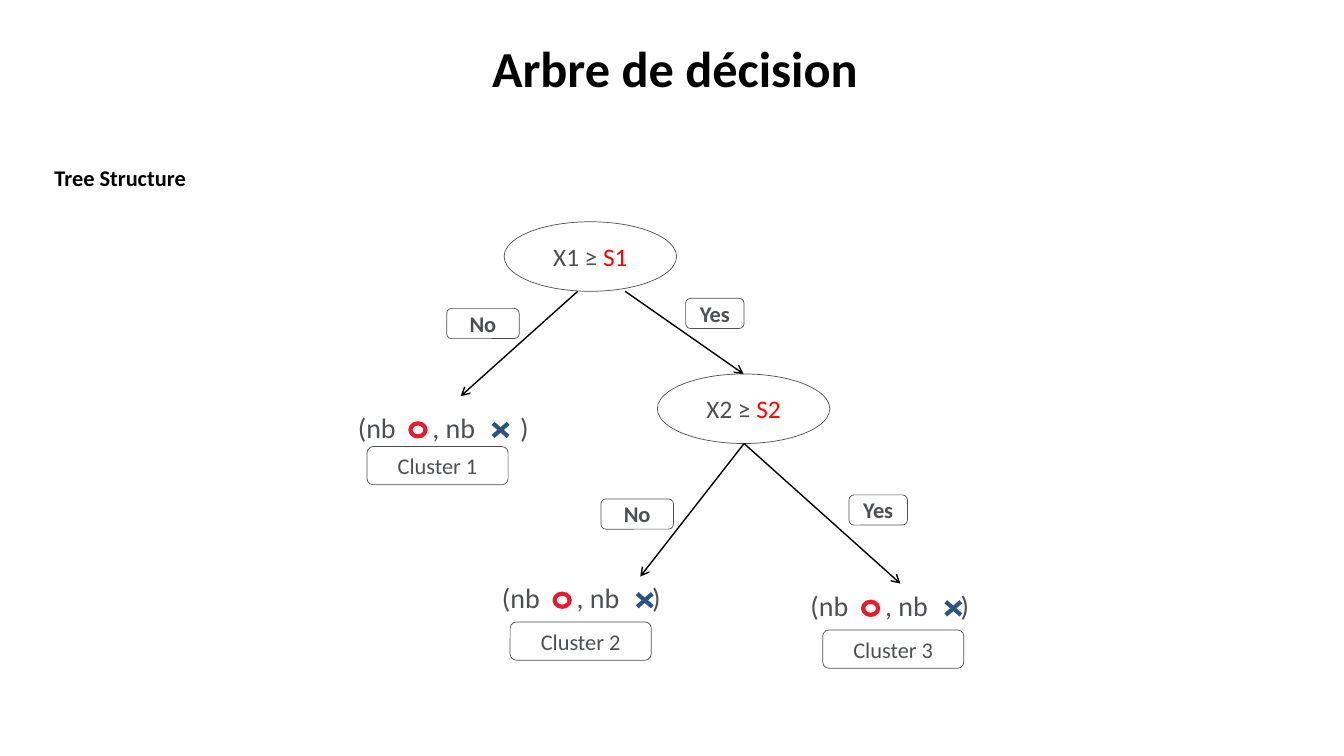
"""Build a slide showing the structure of a decision tree."""
from dataclasses import dataclass

from lxml import etree
from pptx import Presentation
from pptx.dml.color import RGBColor
from pptx.enum.shapes import MSO_CONNECTOR, MSO_SHAPE
from pptx.enum.text import MSO_ANCHOR, MSO_AUTO_SIZE, PP_ALIGN
from pptx.oxml.ns import qn
from pptx.util import Pt

PX = 9144
FONT = "Calibri"
BLACK = RGBColor(0x00, 0x00, 0x00)
WHITE = RGBColor(0xFF, 0xFF, 0xFF)
GRAY = RGBColor(0x4D, 0x4F, 0x53)
RED = RGBColor(0xFF, 0x00, 0x00)
CRIMSON = RGBColor(0xE5, 0x1B, 0x2E)
NAVY = RGBColor(0x2D, 0x53, 0x81)
OVAL = MSO_SHAPE.OVAL
ROUNDED = MSO_SHAPE.ROUNDED_RECTANGLE
STRAIGHT = MSO_CONNECTOR.STRAIGHT
LEFT, CENTER = PP_ALIGN.LEFT, PP_ALIGN.CENTER
TOP, MIDDLE = MSO_ANCHOR.TOP, MSO_ANCHOR.MIDDLE
NO_AUTOFIT = MSO_AUTO_SIZE.NONE

NODE_W, NODE_H = 171, 69
LABEL_H = 30
CLUSTER_W, CLUSTER_H = 140, 38
LEGEND_W, LEGEND_H = 198, 44
MARK_W, MARK_H = 15, 13
CIRCLE_DX, CROSS_DX, MARK_DY = 62, 144, 18
COMMA_TAB = 74


@dataclass(frozen=True)
class Node:
    x: int
    y: int
    variable: str
    threshold: str


@dataclass(frozen=True)
class Branch:
    x1: int
    y1: int
    x2: int
    y2: int


@dataclass(frozen=True)
class Label:
    x: int
    y: int
    w: int
    text: str


@dataclass(frozen=True)
class Leaf:
    x: int
    y: int
    close_tab: int
    cluster_x: int
    cluster_y: int
    name: str


ROOT = Node(500, 220, "X1", "S1")
CHILD = Node(652, 371, "X2", "S2")
ROOT_YES = Branch(620, 289, 738, 371)
BRANCHES = [
    Branch(573, 289, 457, 393),
    Branch(738, 440, 635, 572),
    Branch(738, 440, 893, 579),
]
LABELS = [
    Label(443, 306, 72, "No"),
    Label(680, 296, 58, "Yes"),
    Label(842, 491, 58, "Yes"),
    Label(596, 495, 72, "No"),
]
LEAVES = [
    Leaf(345, 402, 161, 364, 443, "Cluster 1"),
    Leaf(488, 571, 149, 506, 617, "Cluster 2"),
    Leaf(794, 579, 149, 816, 625, "Cluster 3"),
]


def write(tf, *parts, size=16, color=GRAY, bold=False, align=CENTER,
          anchor=MIDDLE, insets=(0, 0, 0, 0), spacing=None, tabs=()):
    """Write (text, colour) parts or plain strings as one formatted paragraph."""
    tf.word_wrap = True
    tf.auto_size = NO_AUTOFIT
    tf.vertical_anchor = anchor
    tf.margin_left, tf.margin_top, tf.margin_right, tf.margin_bottom = (
        v * PX for v in insets)
    p = tf.paragraphs[0]
    p.alignment = align
    if spacing:
        p.line_spacing = spacing
    if tabs:
        tab_list = etree.SubElement(p._p.get_or_add_pPr(), qn("a:tabLst"))
        for pos in tabs:
            etree.SubElement(tab_list, qn("a:tab"), pos=str(pos * PX), algn="l")
    for part in parts:
        text, part_color = (part, color) if isinstance(part, str) else part
        r = p.add_run()
        r.text = text
        r.font.name = FONT
        r.font.size = Pt(size)
        r.font.bold = bold
        r.font.color.rgb = part_color


def add_box(s, kind, x: int, y: int, w: int, h: int, line=GRAY, width=0.5, fill=WHITE):
    """Add an outlined preset shape, unfilled when fill is None."""
    sp = s.shapes.add_shape(kind, x * PX, y * PX, w * PX, h * PX)
    sp.shadow.inherit = False
    if fill is None:
        sp.fill.background()
    else:
        sp.fill.solid()
        sp.fill.fore_color.rgb = fill
    sp.line.color.rgb = line
    sp.line.width = Pt(width)
    return sp


def add_text(s, x: int, y: int, w: int, h: int, text: str, **fmt):
    """Add a text box."""
    sp = s.shapes.add_textbox(x * PX, y * PX, w * PX, h * PX)
    write(sp.text_frame, text, **fmt)


def add_line(s, x1: int, y1: int, x2: int, y2: int, color=BLACK, width=1, arrow=False):
    """Add a straight connector, optionally with an arrowhead at its end."""
    sp = s.shapes.add_connector(STRAIGHT, x1 * PX, y1 * PX, x2 * PX, y2 * PX)
    sp.line.color.rgb = color
    sp.line.width = Pt(width)
    if arrow:
        etree.SubElement(sp.line._get_or_add_ln(), qn("a:tailEnd"), type="arrow")
    etree.SubElement(sp._element.spPr, qn("a:effectLst"))
    return sp


def add_node(s, node: Node):
    """Add a decision node."""
    sp = add_box(s, OVAL, node.x, node.y, NODE_W, NODE_H)
    write(sp.text_frame, f"{node.variable} ≥ ", (node.threshold, RED), size=18)
    return sp


def add_branch(s, b: Branch):
    """Add an arrow between two levels of the tree."""
    return add_line(s, b.x1, b.y1, b.x2, b.y2, arrow=True)


def add_label(s, label: Label):
    """Add the answer that labels a branch."""
    sp = add_box(s, ROUNDED, label.x, label.y, label.w, LABEL_H)
    write(sp.text_frame, label.text, bold=True)


def add_leaf(s, leaf: Leaf):
    """Add a leaf with its counts of circles and crosses and its cluster."""
    add_text(s, leaf.x, leaf.y, LEGEND_W, LEGEND_H, "(nb\t, nb\t)", size=20,
             align=LEFT, anchor=TOP, insets=(10, 5, 10, 5),
             tabs=(COMMA_TAB, leaf.close_tab))
    top = leaf.y + MARK_DY
    bottom = top + MARK_H
    add_box(s, OVAL, leaf.x + CIRCLE_DX, top, MARK_W, MARK_H, CRIMSON, 3, None)
    left = leaf.x + CROSS_DX
    right = left + MARK_W
    add_line(s, left, top, right, bottom, NAVY, 3)
    add_line(s, right, top, left, bottom, NAVY, 3)
    sp = add_box(s, ROUNDED, leaf.cluster_x, leaf.cluster_y, CLUSTER_W, CLUSTER_H)
    write(sp.text_frame, leaf.name)


def main():
    """Build and save the slide."""
    prs = Presentation()
    prs.slide_width, prs.slide_height = 1333 * PX, 750 * PX
    s = prs.slides.add_slide(prs.slide_layouts[5])
    title = s.shapes.title
    title.left, title.top, title.width, title.height = (
        v * PX for v in (47, 39, 1239, 56))
    write(title.text_frame, "Arbre de décision", size=36, color=BLACK, bold=True,
          anchor=TOP, insets=(10, 5, 4, 5), spacing=0.9)
    add_text(s, 47, 166, 1239, 30, "Tree Structure", color=BLACK, bold=True,
             align=LEFT, anchor=TOP, insets=(7, 0, 0, 0), spacing=0.9)
    add_node(s, ROOT)
    child = add_node(s, CHILD)
    add_branch(s, ROOT_YES).end_connect(child, 0)
    for branch in BRANCHES:
        add_branch(s, branch)
    for leaf in LEAVES:
        add_leaf(s, leaf)
    for label in LABELS:
        add_label(s, label)
    prs.save("out.pptx")


if __name__ == "__main__":
    main()
